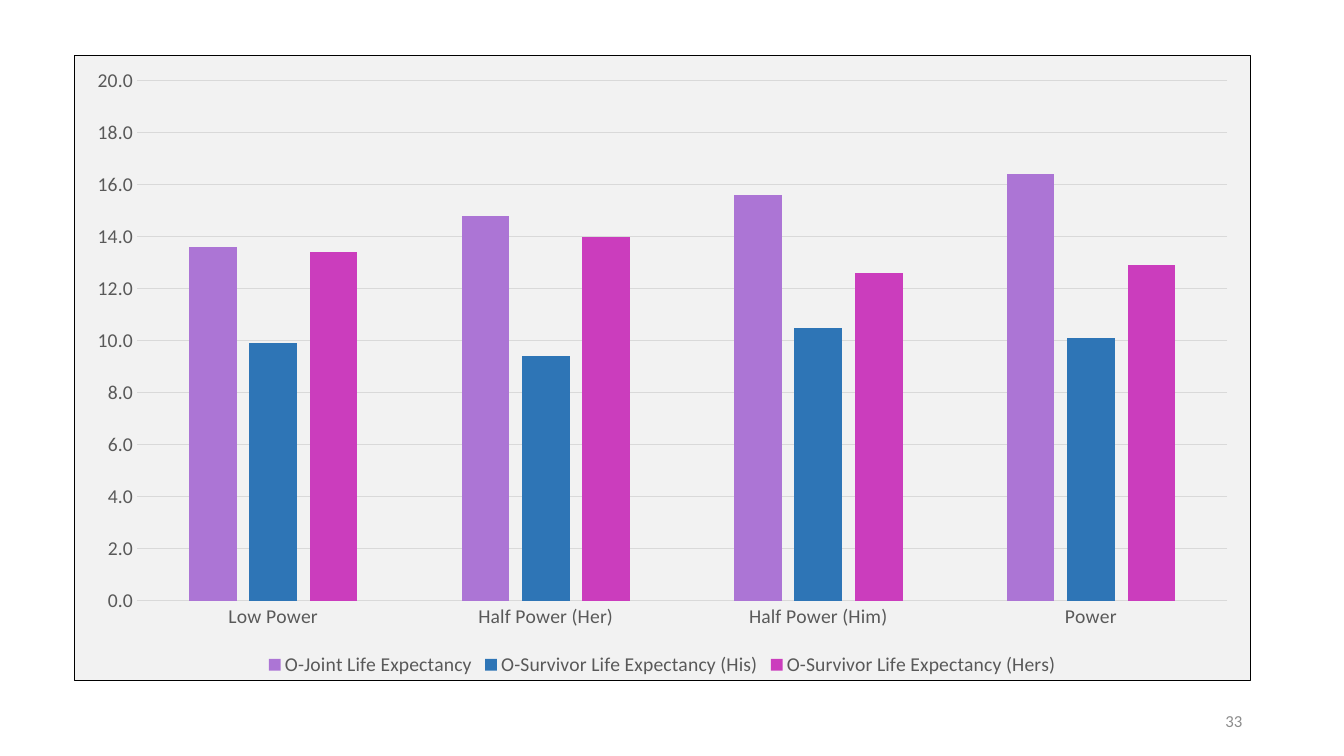
from dataclasses import dataclass

from lxml.etree import fromstring
from pptx import Presentation
from pptx.chart.chart import Chart
from pptx.chart.data import CategoryChartData
from pptx.dml.color import RGBColor
from pptx.enum.chart import XL_CHART_TYPE as ChartType
from pptx.enum.chart import XL_LEGEND_POSITION as LegendPos
from pptx.enum.chart import XL_TICK_MARK as Tick
from pptx.enum.text import MSO_ANCHOR as Anchor
from pptx.enum.text import PP_ALIGN as Align
from pptx.oxml.ns import nsdecls
from pptx.slide import Slide
from pptx.util import Emu, Pt

EMU_PER_PX = 9144  # 100 px to the inch


@dataclass(frozen=True)
class Theme:
    font: str = "Calibri"
    label: str = "595959"
    grid: str = "D9D9D9"
    panel: str = "F2F2F2"
    border: str = "000000"
    page_number: str = "8C8C8C"
    label_size: int = 14
    number_size: int = 12
    line_width: float = 0.75


@dataclass(frozen=True)
class Box:
    left: int
    top: int
    width: int
    height: int

    def emu(self) -> tuple[Emu, ...]:
        return tuple(px(v) for v in (self.left, self.top, self.width, self.height))


@dataclass(frozen=True)
class Series:
    name: str
    color: str
    values: tuple[float, ...]


THEME = Theme()
CHART_BOX = Box(73, 55, 1168, 621)
NUMBER_BOX = Box(942, 695, 300, 40)
CATEGORIES = ("Low Power", "Half Power (Her)", "Half Power (Him)", "Power")
SERIES = (
    Series("O-Joint Life Expectancy", "AC75D5", (13.6, 14.8, 15.6, 16.4)),
    Series("O-Survivor Life Expectancy (His)", "2E75B6", (9.9, 9.4, 10.5, 10.1)),
    Series("O-Survivor Life Expectancy (Hers)", "CB3DBD", (13.4, 14.0, 12.6, 12.9)),
)


def px(value: int) -> Emu:
    return Emu(value * EMU_PER_PX)


def format_font(font, *, size: int, color: str) -> None:
    font.name = THEME.font
    font.size = Pt(size)
    font.color.rgb = RGBColor.from_string(color)


def format_line(line, color: str) -> None:
    line.color.rgb = RGBColor.from_string(color)
    line.width = Pt(THEME.line_width)


def frame_chart(chart: Chart) -> None:
    """Fill and outline the whole chart area."""
    chart_space = chart.element
    chart_space.chart.addnext(fromstring(
        f'<c:spPr {nsdecls("c", "a")}>'
        f'<a:solidFill><a:srgbClr val="{THEME.panel}"/></a:solidFill>'
        f'<a:ln w="{Pt(THEME.line_width)}"><a:solidFill>'
        f'<a:srgbClr val="{THEME.border}"/></a:solidFill></a:ln></c:spPr>'
    ))


def add_column_chart(slide: Slide, box: Box) -> None:
    data = CategoryChartData(number_format="#,##0.0")
    data.categories = CATEGORIES
    for series in SERIES:
        data.add_series(series.name, series.values)
    chart = slide.shapes.add_chart(ChartType.COLUMN_CLUSTERED, *box.emu(), data).chart
    chart.has_title = False
    format_font(chart.font, size=THEME.label_size, color=THEME.label)
    frame_chart(chart)

    # Columns
    plot = chart.plots[0]
    plot.vary_by_categories = False
    plot.gap_width, plot.overlap = 219, -27
    for drawn, series in zip(plot.series, SERIES):
        drawn.format.fill.solid()
        drawn.format.fill.fore_color.rgb = RGBColor.from_string(series.color)

    # Axes
    for axis in (chart.category_axis, chart.value_axis):
        axis.major_tick_mark = axis.minor_tick_mark = Tick.NONE
        format_font(axis.tick_labels.font, size=THEME.label_size, color=THEME.label)
    format_line(chart.category_axis.format.line, THEME.grid)
    values = chart.value_axis
    values.minimum_scale, values.maximum_scale, values.major_unit = 0, 20, 2
    values.tick_labels.number_format = "#,##0.0"
    values.tick_labels.number_format_is_linked = False
    values.format.line.fill.background()
    format_line(values.major_gridlines.format.line, THEME.grid)

    # Legend
    chart.has_legend = True
    chart.legend.position = LegendPos.BOTTOM
    chart.legend.include_in_layout = False
    format_font(chart.legend.font, size=THEME.label_size, color=THEME.label)


def add_text(slide: Slide, text: str, box: Box, *, size: int, color: str,
             align: Align = Align.LEFT) -> None:
    tf = slide.shapes.add_textbox(*box.emu()).text_frame
    tf.word_wrap = True
    tf.vertical_anchor = Anchor.MIDDLE
    p = tf.paragraphs[0]
    p.alignment = align
    r = p.add_run()
    r.text = text
    format_font(r.font, size=size, color=color)


def main() -> None:
    prs = Presentation()
    prs.slide_width, prs.slide_height = px(1333), px(750)
    slide = prs.slides.add_slide(prs.slide_layouts.get_by_name("Blank"))
    add_column_chart(slide, CHART_BOX)
    add_text(slide, "33", NUMBER_BOX, size=THEME.number_size,
             color=THEME.page_number, align=Align.RIGHT)
    prs.save("out.pptx")


if __name__ == "__main__":
    main()
